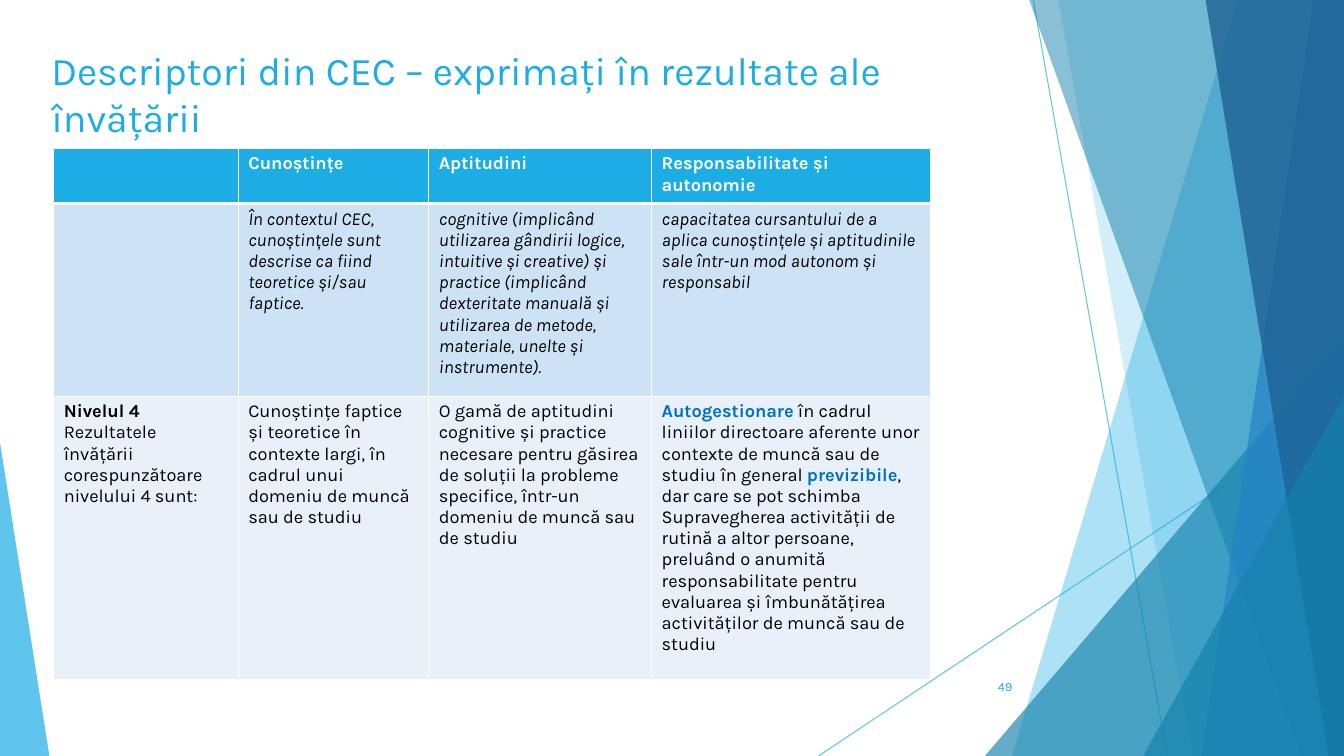
from dataclasses import dataclass

from lxml.etree import SubElement
from pptx import Presentation
from pptx.dml.color import RGBColor
from pptx.enum.shapes import MSO_CONNECTOR as Connector, MSO_SHAPE as Shape
from pptx.enum.text import MSO_ANCHOR as Anchor, PP_ALIGN as Align
from pptx.oxml.ns import qn
from pptx.util import Emu, Inches, Pt


@dataclass(frozen=True)
class Theme:
    font: str = "Karla"
    accent: str = "1CADE4"
    teal: str = "1482AC"
    blue: str = "2683C6"
    navy: str = "1D6294"
    keyword: str = "0070C0"
    ink: str = "000000"
    white: str = "FFFFFF"
    row_dark: str = "CDE3F5"
    row_light: str = "E8F1FA"
    title_size: int = 28
    table_size: int = 13
    number_size: int = 9
    hairline: float = 0.75
    border: int = 1
    header_border: int = 3


def write(paragraph, text, *, font, size, color, bold=False, italic=False):
    """Append one formatted run to a paragraph."""
    run = paragraph.add_run()
    run.text = text
    run.font.name = font
    run.font.size = Pt(size)
    run.font.color.rgb = RGBColor.from_string(color)
    run.font.bold = bold
    run.font.italic = italic


def set_opacity(fill_parent, percent):
    color = fill_parent.find(qn("a:solidFill"))[0]
    SubElement(color, qn("a:alpha"), val=str(percent * 1000))


class SlideBuilder:
    """Places elements by percent of the slide's width and height."""

    def __init__(self, deck, theme):
        self.theme = theme
        self.width, self.height = deck.slide_width, deck.slide_height
        self.slide = deck.slides.add_slide(deck.slide_layouts[6])
        self.shapes = self.slide.shapes

    def x(self, percent):
        return Emu(round(self.width * percent / 100))

    def y(self, percent):
        return Emu(round(self.height * percent / 100))

    def box(self, left, top, width, height):
        return self.x(left), self.y(top), self.x(width), self.y(height)

    def paint(self, shape, color, opacity):
        shape.shadow.inherit = False
        shape.fill.solid()
        shape.fill.fore_color.rgb = RGBColor.from_string(color)
        shape.line.fill.background()
        set_opacity(shape.fill._xPr, opacity)

    def line(self, start, end):
        connector = self.shapes.add_connector(
            Connector.STRAIGHT, self.x(start[0]), self.y(start[1]),
            self.x(end[0]), self.y(end[1]))
        connector.line.width = Pt(self.theme.hairline)
        connector.line.color.rgb = RGBColor.from_string(self.theme.accent)
        properties = connector._element.spPr
        set_opacity(properties.find(qn("a:ln")), 70)
        SubElement(properties, qn("a:effectLst"))

    def band(self, top_x, bottom_x, color, opacity):
        """Full-height facet from a slanted edge to the right side."""
        outline = self.shapes.build_freeform(self.x(top_x), 0)
        corners = [(100, 0), (100, 100), (bottom_x, 100)]
        outline.add_line_segments([(self.x(h), self.y(v)) for h, v in corners])
        self.paint(outline.convert_to_shape(), color, opacity)

    def corner(self, left, top, width, color, opacity, apex):
        """Right triangle standing on the bottom edge."""
        triangle = self.shapes.add_shape(
            Shape.ISOSCELES_TRIANGLE, *self.box(left, top, width, 100 - top))
        triangle.adjustments[0] = apex
        self.paint(triangle, color, opacity)

    def text(self, text, place, size, align=Align.LEFT, anchor=Anchor.TOP):
        frame = self.shapes.add_textbox(*self.box(*place)).text_frame
        frame.word_wrap = True
        frame.vertical_anchor = anchor
        paragraph = frame.paragraphs[0]
        paragraph.alignment = align
        write(paragraph, text, font=self.theme.font, size=size,
              color=self.theme.accent)

    def table(self, left, top, columns, rows, row_styles, content):
        place = self.box(left, top, sum(columns), sum(rows))
        table = self.shapes.add_table(len(rows), len(columns), *place).table
        for column, width in zip(table.columns, columns):
            column.width = self.x(width)
        for r, (height, (fill, style)) in enumerate(zip(rows, row_styles)):
            table.rows[r].height = self.y(height)
            for c, runs in enumerate(content[r]):
                self.cell(table.cell(r, c), runs, fill, style, r)

    def cell(self, cell, runs, fill, style, row):
        theme = self.theme
        thick = {0: "lnB", 1: "lnT"}.get(row)
        properties = cell._tc.get_or_add_tcPr()
        for side in ("lnL", "lnR", "lnT", "lnB"):
            points = theme.header_border if side == thick else theme.border
            edge = SubElement(properties, qn(f"a:{side}"), w=str(Pt(points)))
            solid = SubElement(edge, qn("a:solidFill"))
            SubElement(solid, qn("a:srgbClr"), val=theme.white)
        cell.fill.solid()
        cell.fill.fore_color.rgb = RGBColor.from_string(fill)
        base = {"font": theme.font, "size": theme.table_size} | style
        for text, emphasis in runs:
            write(cell.text_frame.paragraphs[0], text, **(base | emphasis))


def plain(*texts):
    """One unemphasised run for each cell; an empty text leaves it blank."""
    return [[(text, {})] if text else [] for text in texts]


def main():
    theme = Theme()
    deck = Presentation()
    deck.slide_width, deck.slide_height = Inches(13.33), Inches(7.5)
    page = SlideBuilder(deck, theme)

    # Faceted backdrop
    page.line((76.88, 0), (86.85, 100))
    page.line((100, 53.73), (60.9, 100))
    page.band(92.1, 75.3, theme.accent, 36)
    page.band(78.75, 88.73, theme.accent, 20)
    page.corner(73.28, 44.4, 26.72, theme.teal, 66, apex=1)
    page.band(76.58, 96.83, theme.teal, 50)
    page.band(97.73, 89.4, theme.blue, 70)
    page.band(89.7, 98.85, theme.navy, 80)
    page.corner(85.05, 52.4, 14.95, theme.teal, 66, apex=1)
    page.corner(0, 58.53, 3.68, theme.accent, 70, apex=0)

    # Title
    page.text("Descriptori din CEC – exprimați în rezultate ale învățării",
              (3.08, 5.47, 75, 15.6), theme.title_size)

    # Descriptor table
    strong = {"bold": True}
    keyword = {"bold": True, "color": theme.keyword}
    header = plain("", "Cunoștințe", "Aptitudini",
                   "Responsabilitate și autonomie")
    definitions = plain(
        "",
        "În contextul CEC, cunoștințele sunt descrise ca fiind teoretice "
        "și/sau faptice.",
        "cognitive (implicând utilizarea gândirii logice, intuitive și "
        "creative) și practice (implicând dexteritate manuală și utilizarea "
        "de metode, materiale, unelte și instrumente).",
        "capacitatea cursantului de a aplica cunoștințele și aptitudinile "
        "sale într-un mod autonom și responsabil")
    level = [("Nivelul 4 ", strong),
             ("Rezultatele învățării corespunzătoare nivelului 4 sunt:", {})]
    outcomes = plain(
        "Cunoștințe faptice și teoretice în contexte largi, în cadrul unui "
        "domeniu de muncă sau de studiu",
        "O gamă de aptitudini cognitive și practice necesare pentru găsirea "
        "de soluții la probleme specifice, într-un domeniu de muncă sau de "
        "studiu")
    autonomy = [
        ("Autogestionare", keyword),
        (" în cadrul liniilor directoare aferente unor contexte de muncă sau "
         "de studiu în general ", {}),
        ("previzibile", keyword),
        (", dar care se pot schimba Supravegherea activității de rutină a "
         "altor persoane, preluând o anumită responsabilitate pentru "
         "evaluarea și îmbunătățirea activităților de muncă sau de studiu",
         {})]
    row_styles = [(theme.accent, {"color": theme.white, "bold": True}),
                  (theme.row_dark, {"color": theme.ink, "italic": True}),
                  (theme.row_light, {"color": theme.ink})]
    page.table(4, 19.6, columns=[13.73, 14.18, 16.58, 20.78],
               rows=[7.33, 25.47, 37.47], row_styles=row_styles,
               content=[header, definitions, [level, *outcomes, autonomy]])

    # Slide number
    page.text("49", (70.43, 88.13, 5.63, 5.33), theme.number_size,
              align=Align.RIGHT, anchor=Anchor.MIDDLE)

    deck.save("out.pptx")


if __name__ == "__main__":
    main()
